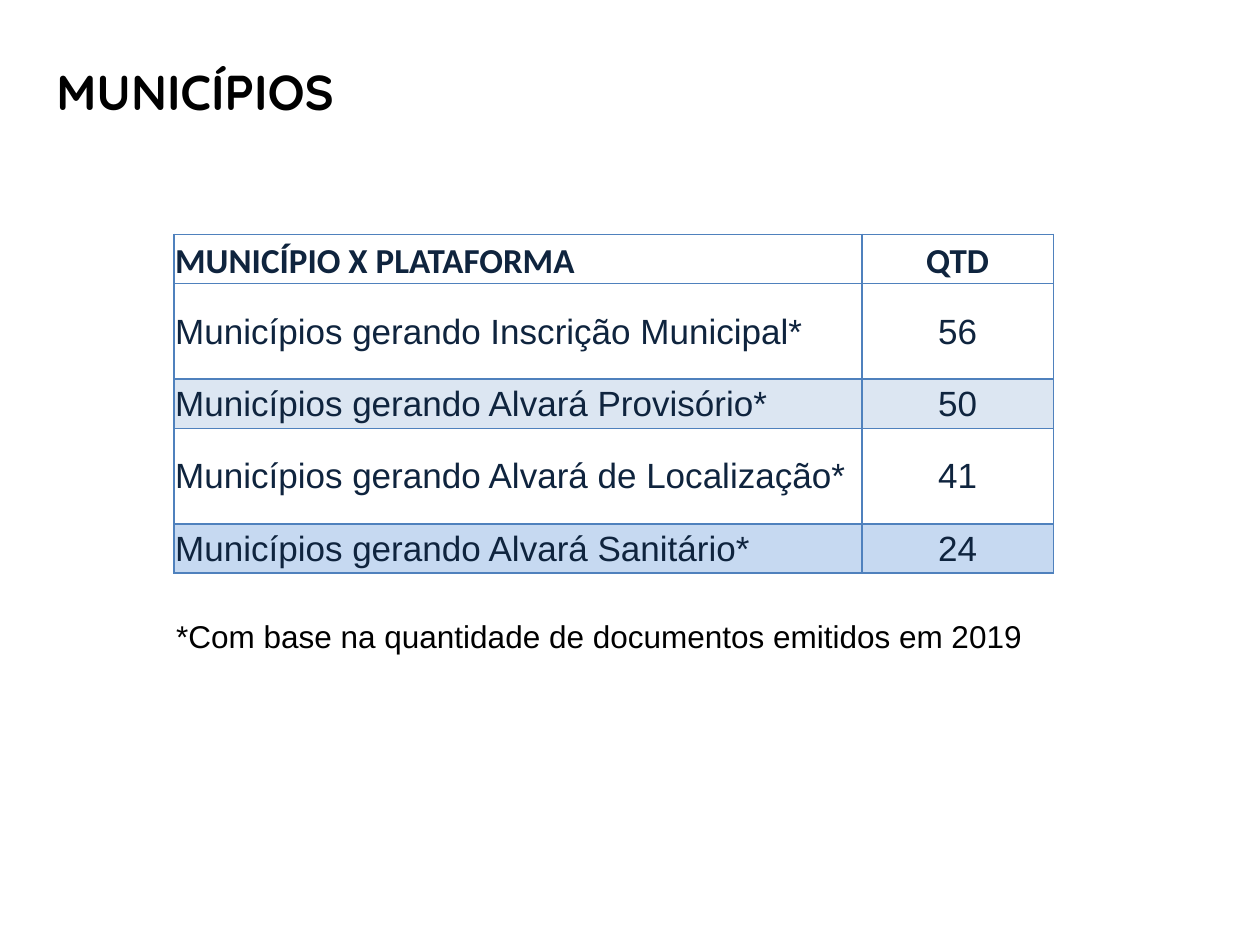
from dataclasses import dataclass

from lxml.etree import SubElement
from pptx import Presentation
from pptx.dml.color import RGBColor
from pptx.enum.text import MSO_ANCHOR, MSO_AUTO_SIZE, PP_ALIGN
from pptx.oxml.ns import qn
from pptx.util import Inches, Pt


@dataclass(frozen=True)
class Theme:
    black: str = "000000"
    navy: str = "0F243E"
    border: str = "4F81BD"
    light_band: str = "DCE6F2"
    strong_band: str = "C6D9F1"
    title_size: int = 28
    table_size: int = 20
    note_size: int = 18
    title_font: str = "Quicksand"
    header_font: str = "Calibri"
    body_font: str = "Arial"


def write_text(text_frame, text, *, font, size, color, bold=False, align=PP_ALIGN.LEFT):
    paragraph = text_frame.paragraphs[0]
    paragraph.alignment = align
    run = paragraph.add_run()
    run.text = text
    run.font.name = font
    run.font.size = Pt(size)
    run.font.bold = bold
    run.font.color.rgb = RGBColor.from_string(color)


class SlideBuilder:
    def __init__(self, slide, theme):
        self.slide = slide
        self.theme = theme

    def text_box(self, text, left, top, width, height, grow=False, **text_format):
        shape = self.slide.shapes.add_textbox(
            Inches(left), Inches(top), Inches(width), Inches(height))
        text_frame = shape.text_frame
        text_frame.word_wrap = True
        if grow:
            text_frame.auto_size = MSO_AUTO_SIZE.SHAPE_TO_FIT_TEXT
        write_text(text_frame, text, **text_format)

    def cell_borders(self, cell):
        properties = cell._tc.get_or_add_tcPr()
        for side in ("a:lnL", "a:lnR", "a:lnT", "a:lnB"):
            line = SubElement(properties, qn(side), w=str(Pt(1)))
            fill = SubElement(line, qn("a:solidFill"))
            SubElement(fill, qn("a:srgbClr"), val=self.theme.border)

    def cell(self, cell, text, fill, is_header, align):
        theme = self.theme
        cell.margin_left = cell.margin_right = cell.margin_top = Inches(0.01)
        cell.margin_bottom = 0
        cell.vertical_anchor = MSO_ANCHOR.BOTTOM if is_header else MSO_ANCHOR.MIDDLE
        self.cell_borders(cell)
        if fill:
            cell.fill.solid()
            cell.fill.fore_color.rgb = RGBColor.from_string(fill)
        else:
            cell.fill.background()
        write_text(cell.text_frame, text, size=theme.table_size, color=theme.navy,
                   font=theme.header_font if is_header else theme.body_font,
                   bold=is_header, align=align)

    def table(self, rows, left, top, column_widths, row_heights):
        table = self.slide.shapes.add_table(
            len(rows), len(column_widths), Inches(left), Inches(top),
            Inches(sum(column_widths)), Inches(sum(row_heights))).table
        table.horz_banding = False
        for column, width in zip(table.columns, column_widths):
            column.width = Inches(width)
        for index, (label, quantity, fill) in enumerate(rows):
            table.rows[index].height = Inches(row_heights[index])
            is_header = index == 0
            self.cell(table.cell(index, 0), label, fill, is_header, PP_ALIGN.LEFT)
            self.cell(table.cell(index, 1), quantity, fill, is_header, PP_ALIGN.CENTER)


def main():
    theme = Theme()
    presentation = Presentation()
    presentation.slide_width = Inches(10)
    presentation.slide_height = Inches(7.5)
    slide = presentation.slides.add_slide(presentation.slide_layouts[6])
    builder = SlideBuilder(slide, theme)

    # Title
    builder.text_box("MUNICÍPIOS", 0.35, 0.44, 8.66, 5.36, font=theme.title_font,
                     size=theme.title_size, color=theme.black, bold=True,
                     align=PP_ALIGN.JUSTIFY)

    # Quantities by document type
    rows = [
        ("MUNICÍPIO X PLATAFORMA", "QTD", None),
        ("Municípios gerando Inscrição Municipal*", "56", None),
        ("Municípios gerando Alvará Provisório*", "50", theme.light_band),
        ("Municípios gerando Alvará de Localização*", "41", None),
        ("Municípios gerando Alvará Sanitário*", "24", theme.strong_band),
    ]
    builder.table(rows, 1.38, 1.86, column_widths=(5.46, 1.52),
                  row_heights=(0.39, 0.76, 0.39, 0.76, 0.39))

    # Footnote
    builder.text_box("*Com base na quantidade de documentos emitidos em 2019",
                     1.3, 4.85, 8.66, 0.4, grow=True, font=theme.body_font,
                     size=theme.note_size, color=theme.black)

    presentation.save("out.pptx")


if __name__ == "__main__":
    main()
